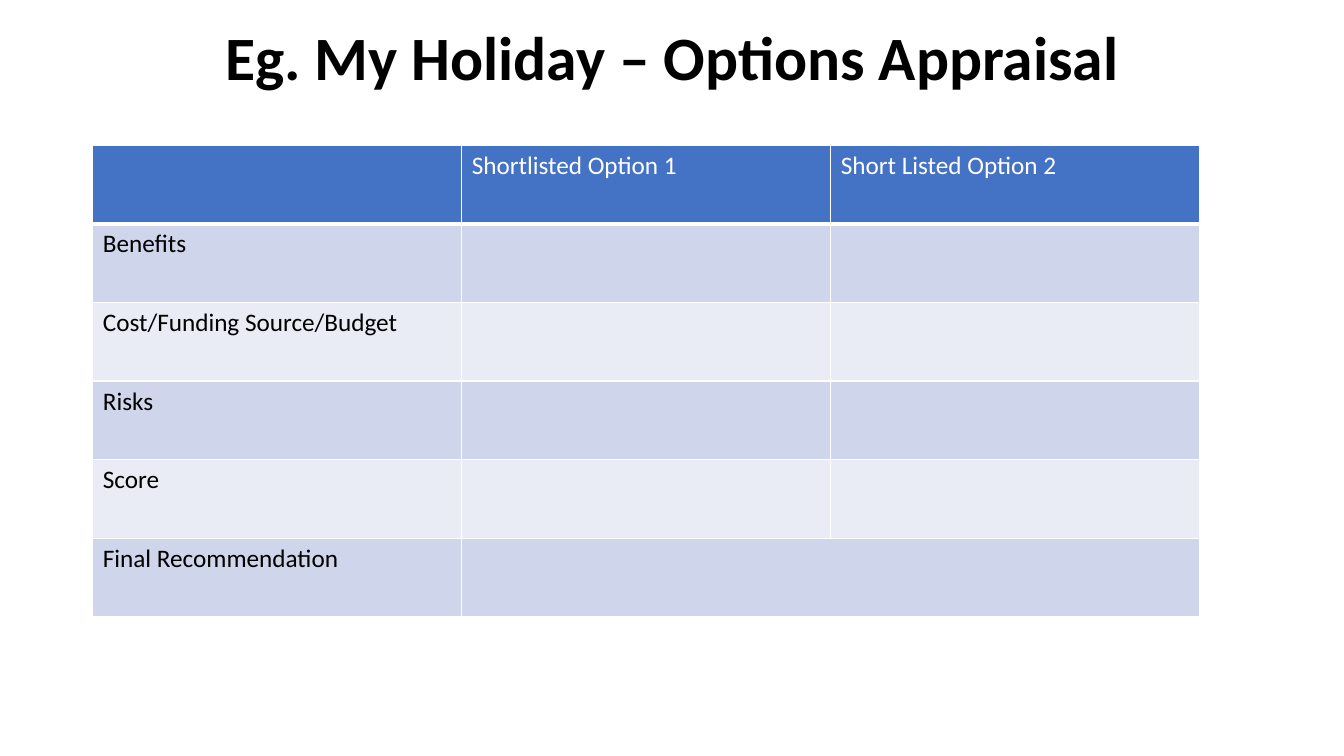
"""Build the holiday options appraisal slide: a title above a comparison table."""
import dataclasses

import lxml.etree
import pptx
import pptx.dml.color
import pptx.enum.text
import pptx.oxml.ns
import pptx.presentation
import pptx.slide
import pptx.table
import pptx.text.text
import pptx.util

FONT = "Calibri"
WHITE = "FFFFFF"
BLACK = "000000"
HEADER_BLUE = "4472C4"
BAND_DARK = "CFD5EA"
BAND_LIGHT = "E9EBF5"
COLUMN_WIDTH = 3.66
ROW_HEIGHT = 0.78


@dataclasses.dataclass(frozen=True)
class AppraisalRow:
    texts: tuple[str, str, str]
    fill: str
    font_color: str = BLACK
    bottom_border: float = 1


ROWS = [
    AppraisalRow(("", "Shortlisted Option 1", "Short Listed Option 2"), HEADER_BLUE, WHITE, 3),
    AppraisalRow(("Benefits", "", ""), BAND_DARK),
    AppraisalRow(("Cost/Funding Source/Budget", "", ""), BAND_LIGHT),
    AppraisalRow(("Risks", "", ""), BAND_DARK),
    AppraisalRow(("Score", "", ""), BAND_LIGHT),
    AppraisalRow(("Final Recommendation", "", ""), BAND_DARK),
]


def rgb(color: str) -> pptx.dml.color.RGBColor:
    return pptx.dml.color.RGBColor.from_string(color)


def format_runs(paragraph: pptx.text.text._Paragraph, size: float, color: str, bold: bool) -> None:
    for run in paragraph.runs:
        run.font.name = FONT
        run.font.size = pptx.util.Pt(size)
        run.font.bold = bold
        run.font.color.rgb = rgb(color)


def add_borders(cell: pptx.table._Cell, bottom_width: float) -> None:
    qn = pptx.oxml.ns.qn
    properties = cell._tc.get_or_add_tcPr()
    for side, width in (("lnL", 1), ("lnR", 1), ("lnT", 1), ("lnB", bottom_width)):
        line = lxml.etree.SubElement(properties, qn(f"a:{side}"), w=str(pptx.util.Pt(width)))
        fill = lxml.etree.SubElement(line, qn("a:solidFill"))
        lxml.etree.SubElement(fill, qn("a:srgbClr"), val=WHITE)


def add_title(slide: pptx.slide.Slide) -> None:
    title = slide.shapes.title
    title.left, title.top = pptx.util.Inches(0.92), pptx.util.Inches(-0.12)
    title.width, title.height = pptx.util.Inches(11.5), pptx.util.Inches(1.45)
    text_frame = title.text_frame
    text_frame.text = "Eg. My Holiday – Options Appraisal"
    text_frame.vertical_anchor = pptx.enum.text.MSO_ANCHOR.MIDDLE
    paragraph = text_frame.paragraphs[0]
    paragraph.alignment = pptx.enum.text.PP_ALIGN.CENTER
    paragraph.line_spacing = 0.9
    format_runs(paragraph, 44, BLACK, True)


def add_appraisal_table(slide: pptx.slide.Slide) -> None:
    column_count = len(ROWS[0].texts)
    table = slide.shapes.add_table(
        len(ROWS), column_count,
        pptx.util.Inches(0.92), pptx.util.Inches(1.44),
        pptx.util.Inches(COLUMN_WIDTH * column_count), pptx.util.Inches(ROW_HEIGHT * len(ROWS)),
    ).table
    for row_index, row in enumerate(ROWS):
        for column_index, text in enumerate(row.texts):
            cell = table.cell(row_index, column_index)
            add_borders(cell, row.bottom_border)
            cell.fill.solid()
            cell.fill.fore_color.rgb = rgb(row.fill)
            if text:
                cell.text_frame.text = text
                format_runs(cell.text_frame.paragraphs[0], 18, row.font_color, False)
    last_row = len(ROWS) - 1
    table.cell(last_row, 1).merge(table.cell(last_row, column_count - 1))


def main() -> None:
    presentation = pptx.Presentation()
    presentation.slide_width = pptx.util.Inches(13.33)
    presentation.slide_height = pptx.util.Inches(7.5)
    slide = presentation.slides.add_slide(presentation.slide_layouts[5])
    add_title(slide)
    add_appraisal_table(slide)
    presentation.save("out.pptx")


if __name__ == "__main__":
    main()
